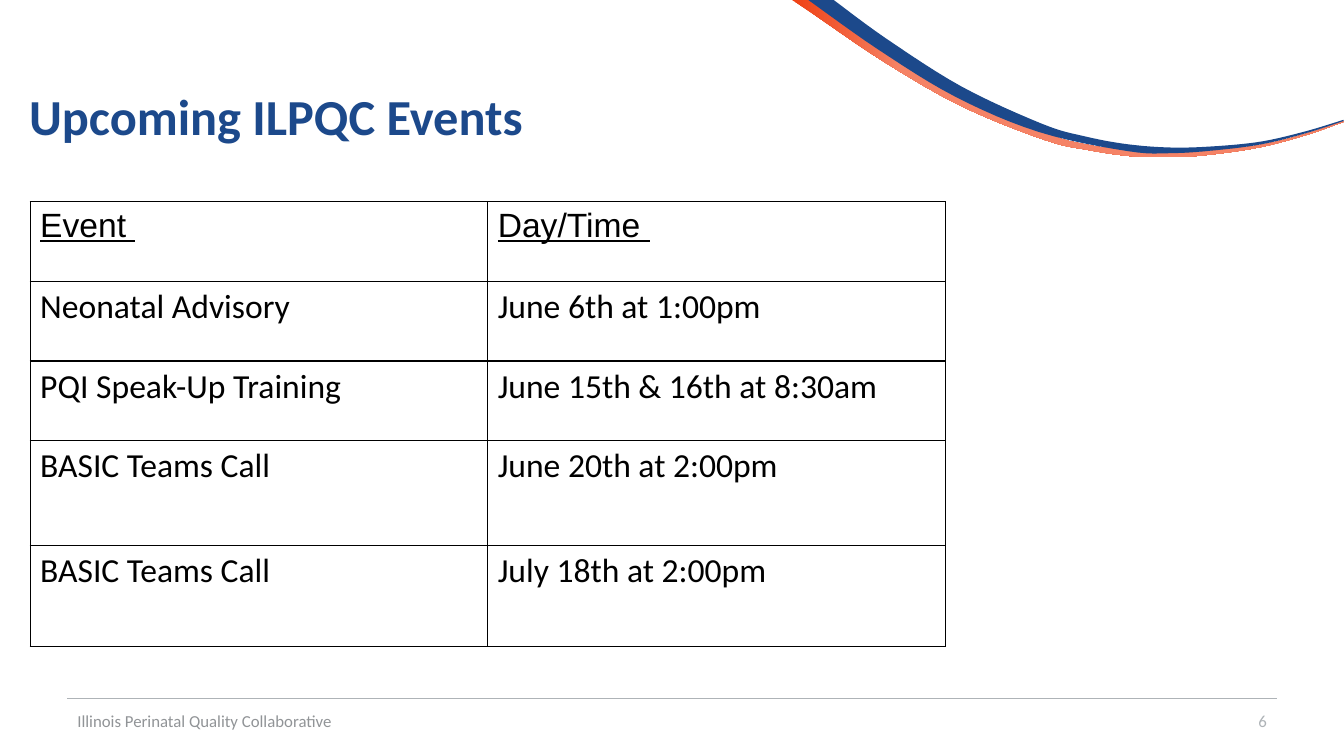
import dataclasses

import lxml.etree
import pptx
import pptx.dml.color
import pptx.enum.shapes
import pptx.enum.text
import pptx.oxml.ns
import pptx.util

Cm = pptx.util.Cm
Pt = pptx.util.Pt
Align = pptx.enum.text.PP_ALIGN
Point = tuple[float, float]


def rgb(code: str) -> pptx.dml.color.RGBColor:
    return pptx.dml.color.RGBColor.from_string(code)


@dataclasses.dataclass(frozen=True)
class Theme:
    blue: str = "1C498B"
    orange: str = "EF4114"
    salmon: str = "F58366"
    rule: str = "AEB3B7"
    footer: str = "919497"
    ink: str = "000000"
    body_font: str = "Calibri"
    header_font: str = "Arial"
    title_size: int = 36
    table_size: int = 24
    footer_size: int = 12


@dataclasses.dataclass(frozen=True)
class Ribbon:
    """Upper edge left to right, lower edge right to left, in centimetres."""
    upper: list[Point]
    lower: list[Point]
    colours: list[str]


@dataclasses.dataclass(frozen=True)
class FooterLabel:
    text: str
    left: float
    width: float
    colour: str
    align: Align


THEME = Theme()
RIBBONS = [
    Ribbon(
        [(20.45, 0), (22.4, 1.37), (24.33, 2.51), (26.39, 3.38), (27.46, 3.66),
         (28.58, 3.81), (29.67, 3.86), (30.78, 3.78), (31.9, 3.63), (32.99, 3.35),
         (33.86, 3.05)],
        [(33.86, 3.07), (32.99, 3.38), (31.9, 3.68), (30.81, 3.86), (29.69, 3.96),
         (28.55, 3.94), (27.43, 3.78), (26.34, 3.53), (24.26, 2.69), (22.3, 1.57),
         (20.42, 0.3), (19.96, 0)],
        [THEME.orange, THEME.salmon]),
    Ribbon(
        [(21.01, 0), (22.33, 0.97), (24.23, 2.18), (26.26, 3.12), (27.35, 3.44),
         (28.45, 3.64), (29.58, 3.72), (30.71, 3.68), (31.83, 3.56), (32.94, 3.3),
         (33.86, 3.02)],
        [(33.86, 3.05), (32.94, 3.35), (31.83, 3.63), (30.71, 3.78), (29.57, 3.86),
         (28.42, 3.81), (26.19, 3.33), (24.08, 2.44), (22.12, 1.24), (20.37, 0)],
        [THEME.blue]),
]
EVENTS = [
    ("Event ", "Day/Time "),
    ("Neonatal Advisory", "June 6th at 1:00pm"),
    ("PQI Speak-Up Training", "June 15th & 16th at 8:30am"),
    ("BASIC Teams Call", "June 20th at 2:00pm"),
    ("BASIC Teams Call", "July 18th at 2:00pm"),
]
ROW_HEIGHTS = [2.01, 2.01, 2.01, 2.64, 2.54]
COLUMN_WIDTH = 11.53
FOOTER_LABELS = [
    FooterLabel("6", 24.56, 7.62, THEME.rule, Align.RIGHT),
    FooterLabel("Illinois Perinatal Quality Collaborative", 1.7, 11.43,
                THEME.footer, Align.LEFT),
]


def write(frame, text: str, colour: str, align: Align = Align.LEFT, **formats) -> None:
    para = frame.paragraphs[0]
    para.alignment = align
    span = para.add_run()
    span.text = text
    for name, value in formats.items():
        setattr(span.font, name, value)
    span.font.color.rgb = rgb(colour)


def smooth(points: list[Point], steps: int = 6) -> list[Point]:
    """Pass a Catmull-Rom curve through the points."""
    padded = [points[0], *points, points[-1]]
    curve = [points[0]]
    for a, b, c, d in zip(padded, padded[1:], padded[2:], padded[3:]):
        for step in range(1, steps + 1):
            t = step / steps
            x, y = (
                (2 * q + (r - p) * t + (2 * p - 5 * q + 4 * r - s) * t ** 2
                 + (3 * q - p - 3 * r + s) * t ** 3) / 2
                for p, q, r, s in zip(a, b, c, d))
            curve.append((x, y))
    return curve


def draw_ribbon(page, ribbon: Ribbon) -> None:
    outline = [(Cm(x), Cm(y)) for x, y in smooth(ribbon.upper) + smooth(ribbon.lower)]
    builder = page.shapes.build_freeform(*outline[0])
    builder.add_line_segments(outline[1:], close=True)
    shape = builder.convert_to_shape()
    shape.shadow.inherit = False
    shape.line.fill.background()
    if len(ribbon.colours) == 1:
        shape.fill.solid()
        shape.fill.fore_color.rgb = rgb(ribbon.colours[0])
        return
    shape.fill.gradient()
    shape.fill.gradient_angle = 0
    for stop, colour, position in zip(shape.fill.gradient_stops, ribbon.colours, (0, 0.2)):
        stop.color.rgb = rgb(colour)
        stop.position = position


def draw_title(page) -> None:
    title = page.shapes.title
    place = {"left": Cm(0.48), "top": Cm(1.07), "width": Cm(30.48), "height": Cm(3.68)}
    for name, value in place.items():
        setattr(title, name, value)
    frame = title.text_frame
    frame.auto_size = pptx.enum.text.MSO_AUTO_SIZE.NONE
    frame.vertical_anchor = pptx.enum.text.MSO_ANCHOR.MIDDLE
    write(frame, "Upcoming ILPQC Events", THEME.blue, name=THEME.body_font,
          size=Pt(THEME.title_size), bold=True)


def draw_footer(page) -> None:
    rule = page.shapes.add_connector(pptx.enum.shapes.MSO_CONNECTOR.STRAIGHT,
                                     Cm(1.7), Cm(17.6), Cm(32.18), Cm(17.6))
    rule.line.color.rgb = rgb(THEME.rule)
    rule.line.width = Pt(0.75)
    lxml.etree.SubElement(rule._element.spPr, pptx.oxml.ns.qn("a:effectLst"))
    for label in FOOTER_LABELS:
        box = page.shapes.add_textbox(Cm(label.left), Cm(17.65), Cm(label.width), Cm(1.02))
        box.text_frame.word_wrap = True
        box.text_frame.vertical_anchor = pptx.enum.text.MSO_ANCHOR.MIDDLE
        write(box.text_frame, label.text, label.colour, label.align,
              name=THEME.body_font, size=Pt(THEME.footer_size))


def outline_cell(cell) -> None:
    properties = cell._tc.get_or_add_tcPr()
    qn = pptx.oxml.ns.qn
    for side in ("a:lnL", "a:lnR", "a:lnT", "a:lnB"):
        border = lxml.etree.SubElement(properties, qn(side), w=str(Pt(1)))
        fill = lxml.etree.SubElement(border, qn("a:solidFill"))
        lxml.etree.SubElement(fill, qn("a:srgbClr"), val=THEME.ink)


def draw_events(page) -> None:
    columns = len(EVENTS[0])
    table = page.shapes.add_table(len(EVENTS), columns, Cm(0.76), Cm(5.08),
                                  Cm(COLUMN_WIDTH * columns), Cm(sum(ROW_HEIGHTS))).table
    table.first_row = table.horz_banding = False
    for column in table.columns:
        column.width = Cm(COLUMN_WIDTH)
    for index, (event, height) in enumerate(zip(EVENTS, ROW_HEIGHTS)):
        table.rows[index].height = Cm(height)
        header = index == 0
        for cell, text in zip(table.rows[index].cells, event):
            outline_cell(cell)
            cell.fill.background()
            write(cell.text_frame, text, THEME.ink, size=Pt(THEME.table_size),
                  name=THEME.header_font if header else THEME.body_font,
                  underline=header)


def main() -> None:
    deck = pptx.Presentation()
    deck.slide_width, deck.slide_height = Cm(33.87), Cm(19.05)
    page = deck.slides.add_slide(deck.slide_layouts.get_by_name("Title Only"))
    for ribbon in RIBBONS:
        draw_ribbon(page, ribbon)
    draw_title(page)
    draw_footer(page)
    draw_events(page)
    deck.save("out.pptx")


if __name__ == "__main__":
    main()
